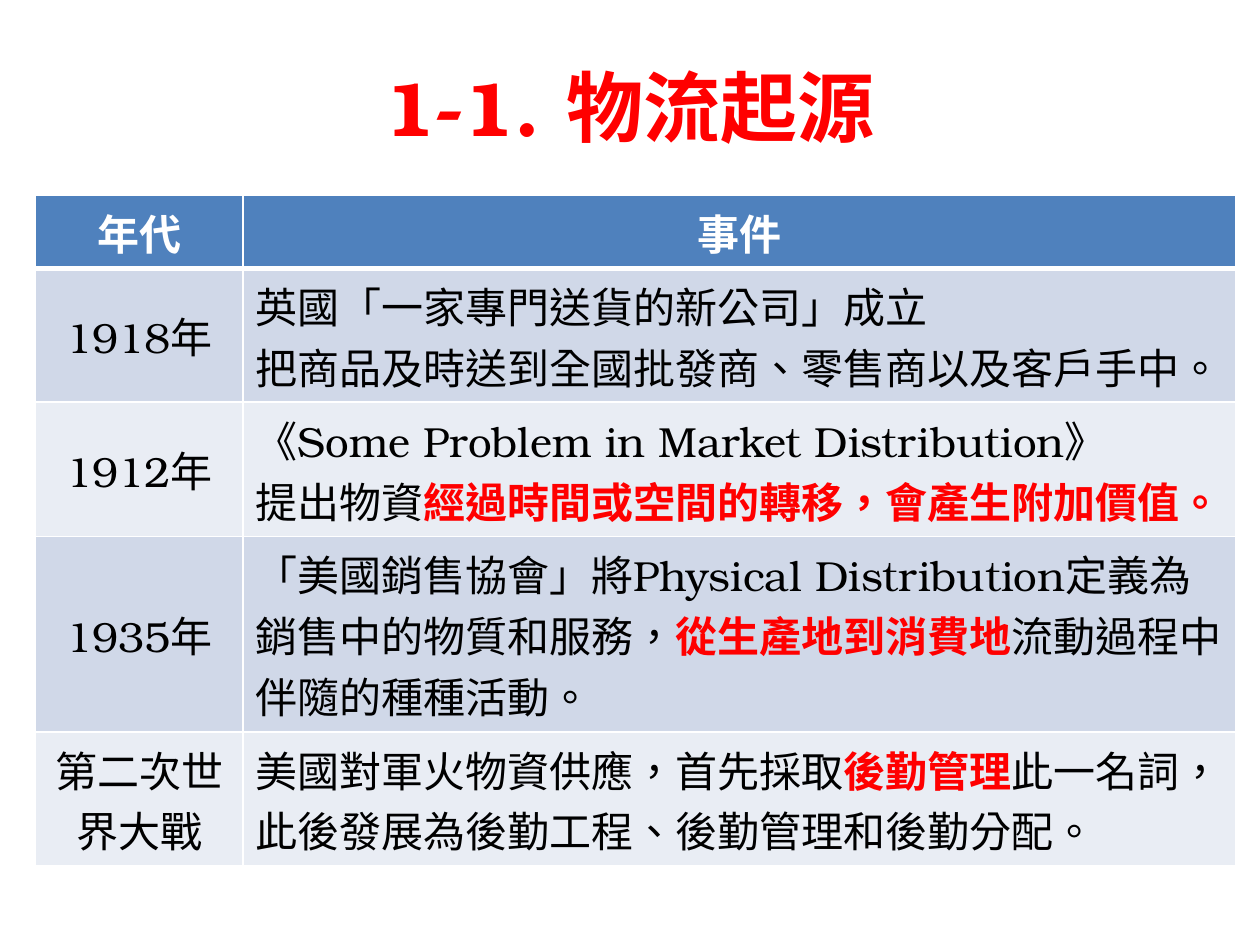
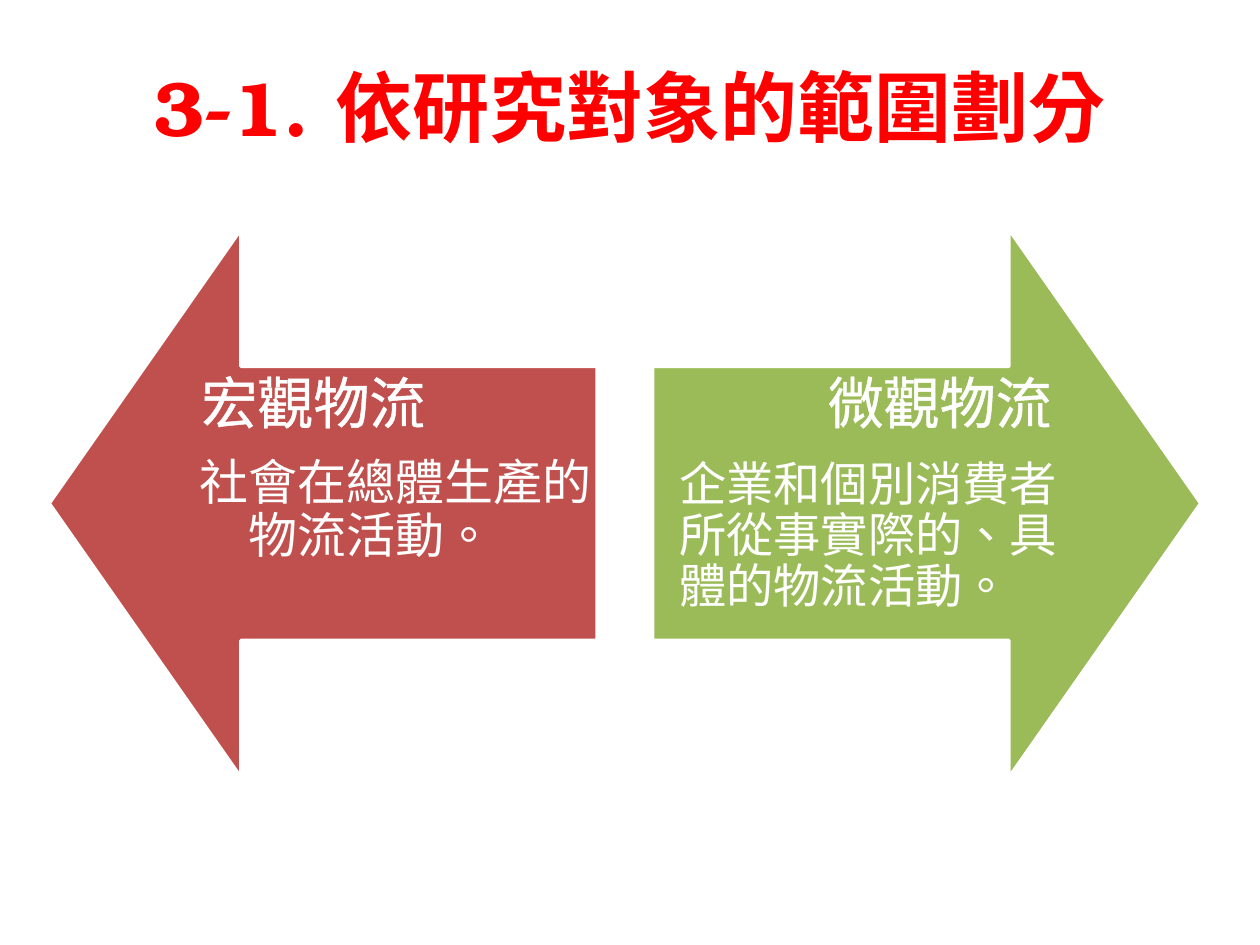
from lxml import etree
from pptx import Presentation
from pptx import util as u
from pptx.dml.color import RGBColor
from pptx.enum import lang, shapes, text
from pptx.oxml import ns

RED = RGBColor(0xFF, 0x00, 0x00)
BLACK = RGBColor(0x00, 0x00, 0x00)
WHITE = RGBColor(0xFF, 0xFF, 0xFF)
HEADER_BLUE = RGBColor(0x4F, 0x81, 0xBD)
BAND_DARK = RGBColor(0xD0, 0xD8, 0xE8)
BAND_LIGHT = RGBColor(0xE9, 0xED, 0xF4)
MACRO_RED = RGBColor(0xC0, 0x50, 0x4D)
MICRO_GREEN = RGBColor(0x9B, 0xBB, 0x59)
FONT = "TeX Gyre Bonum"
LEFT, CENTER = text.PP_ALIGN.LEFT, text.PP_ALIGN.CENTER
MIDDLE, TOP, BOTTOM = (text.MSO_ANCHOR.MIDDLE, text.MSO_ANCHOR.TOP,
                       text.MSO_ANCHOR.BOTTOM)

# Text between asterisks is emphasised in bold red
EVENTS = [
    ("1918年", ["英國「一家專門送貨的新公司」成立",
               "把商品及時送到全國批發商、零售商以及客戶手中。"]),
    ("1912年", ["《Some Problem in Market Distribution》",
               "提出物資*經過時間或空間的轉移，會產生附加價值。*"]),
    ("1935年", ["「美國銷售協會」將Physical Distribution定義為",
               "銷售中的物質和服務，*從生產地到消費地*流動過程中伴隨的種種活動。"]),
    ("第二次世界大戰", ["美國對軍火物資供應，首先採取*後勤管理*此一名詞，",
                 "此後發展為後勤工程、後勤管理和後勤分配。"]),
]


def add_line(parent, tag, color, width, position):
    """Insert a solid line element into a cell's or run's properties."""
    line = etree.Element(ns.qn(tag), w=str(u.Pt(width)))
    fill = etree.SubElement(line, ns.qn("a:solidFill"))
    etree.SubElement(fill, ns.qn("a:srgbClr"), val=str(color))
    parent.insert(position, line)


def write(frame, paragraphs, size, color, bold=False, align=LEFT,
          spacing=None, first_indent=None, outline=None):
    for index, content in enumerate(paragraphs):
        paragraph = frame.paragraphs[0] if index == 0 else frame.add_paragraph()
        paragraph.alignment = align
        if spacing:
            paragraph.line_spacing = spacing
        if first_indent:
            properties = paragraph._p.get_or_add_pPr()
            properties.set("marL", "0")
            properties.set("indent", str(u.Inches(first_indent)))
        for part, words in enumerate(content.split("*")):
            if not words:
                continue
            emphasised = part % 2 == 1
            run = paragraph.add_run()
            run.text = words
            run.font.name = FONT
            run.font.size = u.Pt(size)
            run.font.bold = bold or emphasised
            run.font.color.rgb = RED if emphasised else color
            run.font.language_id = lang.MSO_LANGUAGE_ID.TRADITIONAL_CHINESE
            if outline:
                add_line(run._r.get_or_add_rPr(), "a:ln", color, outline, 0)


def add_text(slide, box, content, anchor=MIDDLE, insets=(0.1, 0.05, 0.1, 0.05),
             **style):
    frame = slide.shapes.add_textbox(*map(u.Inches, box)).text_frame
    frame.word_wrap = True
    frame.vertical_anchor = anchor
    (frame.margin_left, frame.margin_top,
     frame.margin_right, frame.margin_bottom) = map(u.Inches, insets)
    write(frame, [content], **style)


def add_titled_slide(presentation, title):
    slide = presentation.slides.add_slide(presentation.slide_layouts[6])
    add_text(slide, (0.5, 0.21, 9, 1.25), title, size=44, color=RED,
             bold=True, align=CENTER)
    return slide


def fill_cell(cell, paragraphs, fill, top=1, bottom=1, **style):
    cell.vertical_anchor = MIDDLE
    properties = cell._tc.get_or_add_tcPr()
    borders = (("a:lnL", 1), ("a:lnR", 1), ("a:lnT", top), ("a:lnB", bottom))
    for position, (tag, width) in enumerate(borders):
        add_line(properties, tag, WHITE, width, position)
    cell.fill.solid()
    cell.fill.fore_color.rgb = fill
    write(cell.text_frame, paragraphs, size=24, **style)


def add_event_table(slide, left, top, widths, heights):
    box = map(u.Inches, (left, top, sum(widths), sum(heights)))
    table = slide.shapes.add_table(len(heights), len(widths), *box).table
    table.horz_banding = False
    for column, width in zip(table.columns, widths):
        column.width = u.Inches(width)
    for row, height in zip(table.rows, heights):
        row.height = u.Inches(height)
    # Header
    for column, heading in enumerate(("年代", "事件")):
        fill_cell(table.cell(0, column), [heading], HEADER_BLUE, bottom=3,
                  color=WHITE, bold=True, align=CENTER)
    # Events in alternating bands
    for row, (year, event) in enumerate(EVENTS, 1):
        band = BAND_DARK if row % 2 else BAND_LIGHT
        rule = 3 if row == 1 else 1
        fill_cell(table.cell(row, 0), [year], band, top=rule,
                  color=BLACK, align=CENTER)
        fill_cell(table.cell(row, 1), event, band, top=rule, color=BLACK)


def add_scope_arrow(slide, left, top, side, rotation, color, heading,
                    heading_offset, body, body_offset, **body_style):
    arrow = slide.shapes.add_shape(shapes.MSO_SHAPE.UP_ARROW,
                                   *map(u.Inches, (left, top, side, side)))
    arrow.rotation = rotation
    arrow.adjustments[0] = 0.5
    arrow.adjustments[1] = 0.35
    arrow.shadow.inherit = False
    arrow.fill.solid()
    arrow.fill.fore_color.rgb = color
    arrow.line.color.rgb = WHITE
    arrow.line.width = u.Pt(2)
    # Description on the shaft, heading above it
    add_text(slide, (left + body_offset, top + side / 4, 3.59, side / 2), body,
             color=WHITE, spacing=0.9, **body_style)
    add_text(slide, (left + heading_offset, top + 1.05, 2.28, 0.64), heading,
             anchor=TOP, size=32, color=WHITE, outline=1.45)


def main():
    presentation = Presentation()
    presentation.slide_width = u.Inches(10)
    presentation.slide_height = u.Inches(7.5)

    origins = add_titled_slide(presentation, "1-1. 物流起源")
    add_event_table(origins, 0.28, 1.55, widths=(1.65, 7.88),
                    heights=(0.58, 1.06, 1.07, 1.55, 1.06))

    scopes = add_titled_slide(presentation, "3-1. 依研究對象的範圍劃分")
    add_scope_arrow(scopes, 0.39, 1.82, 4.35, 270, MACRO_RED,
                    "宏觀物流", 1.11, "社會在總體生產的物流活動。", 0.76,
                    size=28, align=CENTER, first_indent=0.39,
                    insets=(0.04, 0.16, 0.04, 0.04))
    add_scope_arrow(scopes, 5.18, 1.82, 4.35, 90, MICRO_GREEN,
                    "微觀物流", 1.29,
                    "企業和個別消費者所從事實際的、具體的物流活動。", 0,
                    size=27, anchor=BOTTOM, insets=(0.21,) * 4)

    presentation.save("out.pptx")


if __name__ == "__main__":
    main()
